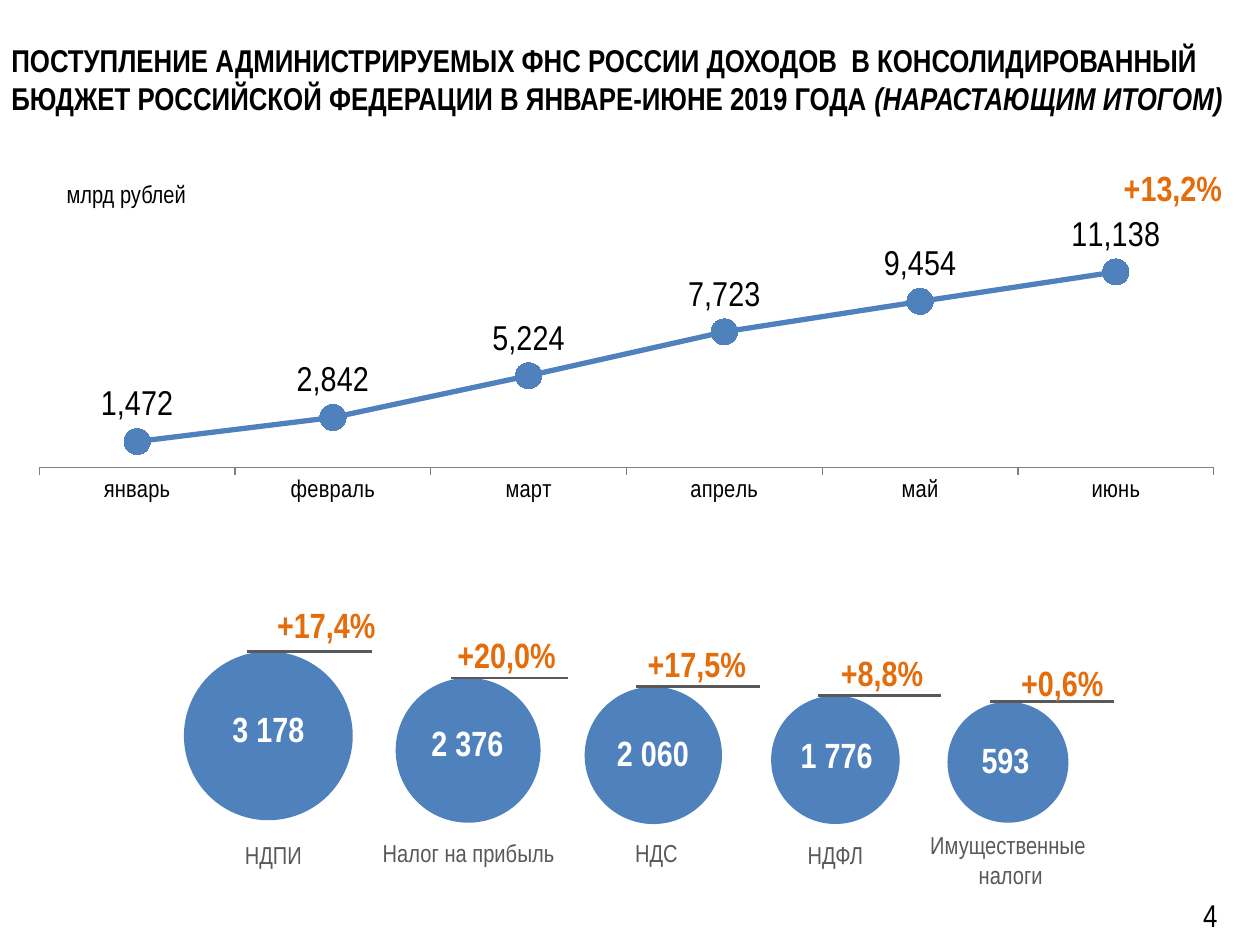
from dataclasses import dataclass
from lxml import etree
from pptx import Presentation
from pptx.chart import data
from pptx.dml import color
from pptx.enum import chart as charts, shapes, text
from pptx.oxml import ns
from pptx.util import Inches, Pt


@dataclass(frozen=True)
class Theme:
    font: str = "Arial Narrow"
    black: str = "000000"
    white: str = "FFFFFF"
    blue: str = "4F81BD"
    orange: str = "E46C0A"
    gray: str = "595959"
    axis: str = "808080"
    title: int = 18
    small: int = 14
    large: int = 20


THEME = Theme()

TITLE = ("ПОСТУПЛЕНИЕ АДМИНИСТРИРУЕМЫХ ФНС РОССИИ ДОХОДОВ  В КОНСОЛИДИРОВАННЫЙ "
         "БЮДЖЕТ РОССИЙСКОЙ ФЕДЕРАЦИИ В ЯНВАРЕ-ИЮНЕ 2019 ГОДА ")
TITLE_NOTE = "(НАРАСТАЮЩИМ ИТОГОМ)"
UNIT = "млрд рублей"
TOTAL_GROWTH = "+13,2%"
PAGE_NUMBER = "4"
REVENUE = {"январь": 1472, "февраль": 2842, "март": 5224,
           "апрель": 7723, "май": 9454, "июнь": 11138}

# name, amount, growth; circle (left, top, diameter); rule (left, width);
# centres of amount (x, y) and growth (x, y); name (centre x, top, height)
TAXES = [
    ("НДПИ", "3 178", "+17,4%", (1.46, 5.17, 1.34), (1.96, 0.99),
     (2.13, 5.78), (2.59, 4.96), (2.17, 6.62, 0.34)),
    ("Налог на прибыль", "2 376", "+20,0%", (3.14, 5.38, 1.15), (3.58, 0.93),
     (3.71, 5.89), (4.02, 5.2), (3.72, 6.6, 0.34)),
    ("НДС", " 2 060", "+17,5%", (4.64, 5.45, 1.09), (5.05, 0.98),
     (5.15, 5.97), (5.53, 5.27), (5.21, 6.6, 0.34)),
    ("НДФЛ", "1 776", "+8,8%", (6.12, 5.52, 1.02), (6.49, 0.98),
     (6.64, 5.99), (7, 5.34), (6.63, 6.62, 0.34)),
    ("Имущественные\n налоги", "593", "+0,6%", (7.52, 5.57, 0.96), (7.86, 0.98),
     (7.98, 6.03), (8.43, 5.42), (8, 6.54, 0.57)),
]
AMOUNT_SIZE = (0.98, 0.98)
GROWTH_SIZE = (0.99, 0.44)
NAME_WIDTH = 1.58


def rgb(value):
    return color.RGBColor.from_string(value)


def style(font, size, ink, bold=False):
    font.name, font.size, font.bold = THEME.font, Pt(size), bold
    font.color.rgb = rgb(ink)


def add_text(page, words, place, size, ink, bold=False, middle=False, centred=True):
    box = page.shapes.add_textbox(*map(Inches, place))
    frame = box.text_frame
    frame.word_wrap = False
    frame.vertical_anchor = text.MSO_ANCHOR.MIDDLE if middle else text.MSO_ANCHOR.TOP
    frame.text = words
    for para in frame.paragraphs:
        para.alignment = text.PP_ALIGN.CENTER if centred else text.PP_ALIGN.LEFT
        for span in para.runs:
            style(span.font, size, ink, bold)
    return box


def around(centre, size):
    """Box of the given size about a centre point."""
    return (centre[0] - size[0] / 2, centre[1] - size[1] / 2, *size)


def add_title(page):
    title = page.shapes.title
    title.left, title.top, title.width, title.height = map(Inches, (-0.01, 0, 10.01, 1.25))
    frame = title.text_frame
    frame.auto_size = text.MSO_AUTO_SIZE.NONE
    frame.vertical_anchor = text.MSO_ANCHOR.MIDDLE
    frame.text = TITLE
    para = frame.paragraphs[0]
    para.alignment = text.PP_ALIGN.LEFT
    para.add_run().text = TITLE_NOTE
    for span in para.runs:
        style(span.font, THEME.title, THEME.black, True)
    para.runs[-1].font.italic = True


def set_plot_area(chart, x, y, w, h):
    area = chart._chartSpace.chart.plotArea
    for old in area.findall(ns.qn("c:layout")):
        area.remove(old)
    layout = etree.Element(ns.qn("c:layout"))
    manual = etree.SubElement(layout, ns.qn("c:manualLayout"))
    settings = [("layoutTarget", "inner"), ("xMode", "edge"), ("yMode", "edge"),
                ("x", x), ("y", y), ("w", w), ("h", h)]
    for name, value in settings:
        etree.SubElement(manual, ns.qn("c:" + name)).set("val", str(value))
    area.insert(0, layout)


def add_revenue_chart(page):
    values = data.CategoryChartData(number_format="#,##0")
    values.categories = list(REVENUE)
    values.add_series("Доходы", list(REVENUE.values()))
    chart = page.shapes.add_chart(charts.XL_CHART_TYPE.LINE_MARKERS_STACKED,
                                  *map(Inches, (0.12, 1.75, 9.61, 2.28)), values).chart
    chart.has_legend = chart.has_title = False
    style(chart.font, THEME.title, THEME.black)
    set_plot_area(chart, 0.02, 0.1, 0.97, 0.77)

    months, amounts = chart.category_axis, chart.value_axis
    style(months.tick_labels.font, THEME.small, THEME.black)
    months.major_tick_mark = charts.XL_TICK_MARK.OUTSIDE
    months.format.line.color.rgb = rgb(THEME.axis)
    months.format.line.width = Pt(0.75)
    amounts.visible = amounts.has_major_gridlines = False
    amounts.minimum_scale, amounts.maximum_scale = -200, 12200

    plot = chart.plots[0]
    plot.vary_by_categories = False
    series = plot.series[0]
    series.smooth = False
    series.format.line.color.rgb = rgb(THEME.blue)
    series.format.line.width = Pt(3)
    marker = series.marker
    marker.style, marker.size = charts.XL_MARKER_STYLE.CIRCLE, 15
    marker.format.fill.solid()
    marker.format.fill.fore_color.rgb = rgb(THEME.blue)
    marker.format.line.color.rgb = rgb(THEME.blue)
    labels = series.data_labels
    labels.show_value = True
    labels.position = charts.XL_LABEL_POSITION.ABOVE
    labels.number_format, labels.number_format_is_linked = "#,##0", False
    style(labels.font, THEME.large, THEME.black)


def add_tax(page, name, amount, growth, circle, rule, amount_at, growth_at, name_at):
    left, top, diameter = circle
    disc = page.shapes.add_shape(shapes.MSO_SHAPE.OVAL,
                                 *map(Inches, (left, top, diameter, diameter)))
    disc.shadow.inherit = False
    disc.fill.solid()
    disc.fill.fore_color.rgb = rgb(THEME.blue)
    disc.line.fill.background()

    start, width = rule
    line = page.shapes.add_connector(shapes.MSO_CONNECTOR.STRAIGHT,
                                     *map(Inches, (start, top, start + width, top)))
    line.line.color.rgb = rgb(THEME.gray)
    line.line.width = Pt(1.5)
    etree.SubElement(line._element.spPr, ns.qn("a:effectLst"))

    add_text(page, amount, around(amount_at, AMOUNT_SIZE), THEME.large, THEME.white, True, True)
    add_text(page, growth, around(growth_at, GROWTH_SIZE), THEME.large, THEME.orange, True)
    centre, name_top, height = name_at
    add_text(page, name, (centre - NAME_WIDTH / 2, name_top, NAME_WIDTH, height),
             THEME.small, THEME.gray)


def main():
    deck = Presentation()
    deck.slide_width, deck.slide_height = Inches(10), Inches(7.5)
    page = deck.slides.add_slide(deck.slide_layouts[5])
    add_title(page)
    add_revenue_chart(page)
    for tax in TAXES:
        add_tax(page, *tax)
    add_text(page, UNIT, (0.43, 1.37, 1.22, 0.34), THEME.small, THEME.black, centred=False)
    add_text(page, TOTAL_GROWTH, (8.82, 1.27, *GROWTH_SIZE), THEME.large, THEME.orange,
             True, centred=False)
    number = add_text(page, PAGE_NUMBER, (9.21, 6.82, 0.79, 0.76), THEME.title, THEME.black,
                      middle=True)
    number.text_frame.paragraphs[0].line_spacing = Pt(30.1)
    deck.save("out.pptx")


if __name__ == "__main__":
    main()
